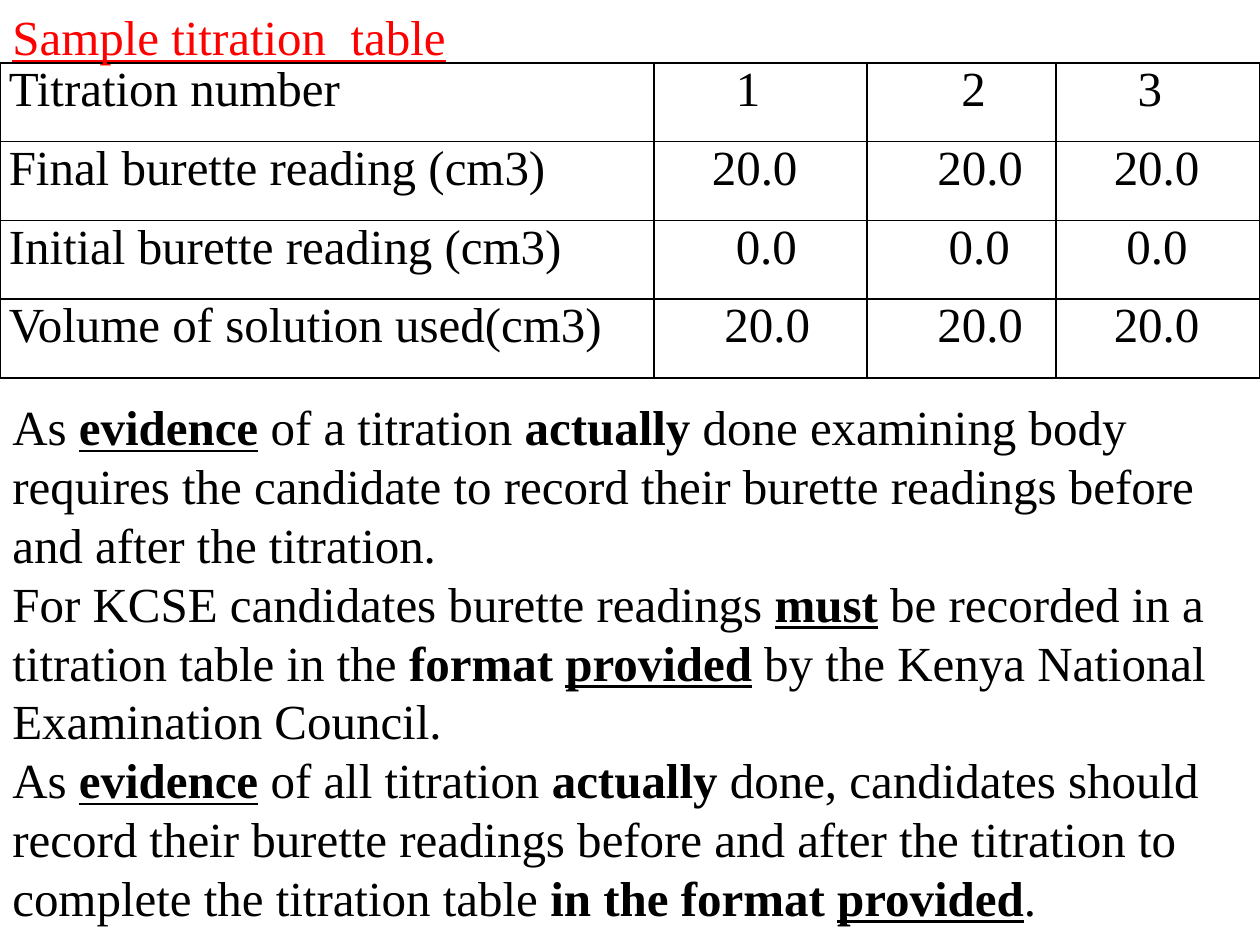
from lxml import etree
from pptx import Presentation
from pptx.dml.color import RGBColor
from pptx.enum.text import MSO_ANCHOR, MSO_AUTO_SIZE
from pptx.oxml.ns import qn
from pptx.util import Inches, Pt

MIDDLE = MSO_ANCHOR.MIDDLE
GROW = MSO_AUTO_SIZE.SHAPE_TO_FIT_TEXT

COLORS = {"heading": "FF0000", "text": "000000", "border": "000000"}
FONT = {"name": "Times New Roman", "size": Pt(28)}
STYLES = {
    "plain": {},
    "bold": {"bold": True},
    "underlined": {"underline": True},
    "strong": {"bold": True, "underline": True},
}

HEADING = [[("Sample titration  table", "underlined")]]
READINGS = [
    ("Titration number", "1", "2", "3"),
    ("Final burette reading (cm3)", "20.0", "20.0", "20.0"),
    ("Initial burette reading (cm3)", "0.0", "0.0", "0.0"),
    ("Volume of solution used(cm3)", "20.0", "20.0", "20.0"),
]
INDENTS = [
    (0, 0.58, 0.68, 0.58),
    (0, 0.39, 0.49, 0.39),
    (0, 0.58, 0.58, 0.49),
    (0, 0.49, 0.49, 0.39),
]
COLUMN_WIDTHS = [5.19, 1.69, 1.5, 1.62]
TABLE_TOP, TABLE_HEIGHT = 0.5, 2.5
GUIDANCE = [
    [("As ", "plain"), ("evidence", "strong"), (" of a titration", "plain"),
     (" actually", "bold"),
     (" done examining body requires the candidate to record their burette "
      "readings before and after the titration.", "plain")],
    [("For KCSE candidates burette readings ", "plain"), ("must", "strong"),
     (" be recorded in a titration table in the ", "plain"),
     ("format ", "bold"), ("provided", "strong"),
     (" by the Kenya National Examination Council.", "plain")],
    [("As ", "plain"), ("evidence", "strong"), (" of all titration", "plain"),
     (" actually", "bold"),
     (" done, candidates should record their burette readings before and "
      "after the titration to complete the titration table", "plain"),
     (" in the format ", "bold"), ("provided", "strong"), (".", "plain")],
]


def add_run(paragraph, text, style, color):
    run = paragraph.add_run()
    run.text = text
    for attribute, value in {**FONT, **STYLES[style]}.items():
        setattr(run.font, attribute, value)
    run.font.color.rgb = RGBColor.from_string(COLORS[color])


def add_text(slide, box, paragraphs, color, wrap):
    frame = slide.shapes.add_textbox(*map(Inches, box)).text_frame
    layout = {"word_wrap": wrap, "auto_size": GROW, "vertical_anchor": MIDDLE}
    for attribute, value in layout.items():
        setattr(frame, attribute, value)
    for index, runs in enumerate(paragraphs):
        paragraph = frame.add_paragraph() if index else frame.paragraphs[0]
        for text, style in runs:
            add_run(paragraph, text, style, color)


def add_borders(cell):
    properties = cell._tc.get_or_add_tcPr()
    for position, side in enumerate(("a:lnL", "a:lnR", "a:lnT", "a:lnB")):
        line = etree.Element(qn(side), w=str(Pt(1)))
        fill = etree.SubElement(line, qn("a:solidFill"))
        etree.SubElement(fill, qn("a:srgbClr"), val=COLORS["border"])
        properties.insert(position, line)


def add_readings(slide):
    table = slide.shapes.add_table(
        len(READINGS), len(COLUMN_WIDTHS), 0, Inches(TABLE_TOP),
        Inches(sum(COLUMN_WIDTHS)), Inches(TABLE_HEIGHT)).table
    table.first_row = table.horz_banding = False
    for column, width in zip(table.columns, COLUMN_WIDTHS):
        column.width = Inches(width)
    margins = {"margin_left": Inches(0.07), "margin_right": Inches(0.07),
               "margin_top": 0, "margin_bottom": 0}
    for row, texts, indents in zip(table.rows, READINGS, INDENTS):
        row.height = Inches(TABLE_HEIGHT / len(READINGS))
        for cell, text, indent in zip(row.cells, texts, indents):
            for attribute, value in margins.items():
                setattr(cell, attribute, value)
            cell.fill.background()
            add_borders(cell)
            paragraph = cell.text_frame.paragraphs[0]
            paragraph._p.get_or_add_pPr().set("marL", str(Inches(indent)))
            add_run(paragraph, text, "plain", "text")


def main():
    deck = Presentation()
    deck.slide_width, deck.slide_height = Inches(10), Inches(7.5)
    slide = deck.slides.add_slide(deck.slide_layouts[6])
    add_readings(slide)
    add_text(slide, (0, 0, 3.67, 0.57), HEADING, "heading", False)
    add_text(slide, (0, 3.08, 10, 4.34), GUIDANCE, "text", True)
    deck.save("out.pptx")


if __name__ == "__main__":
    main()
